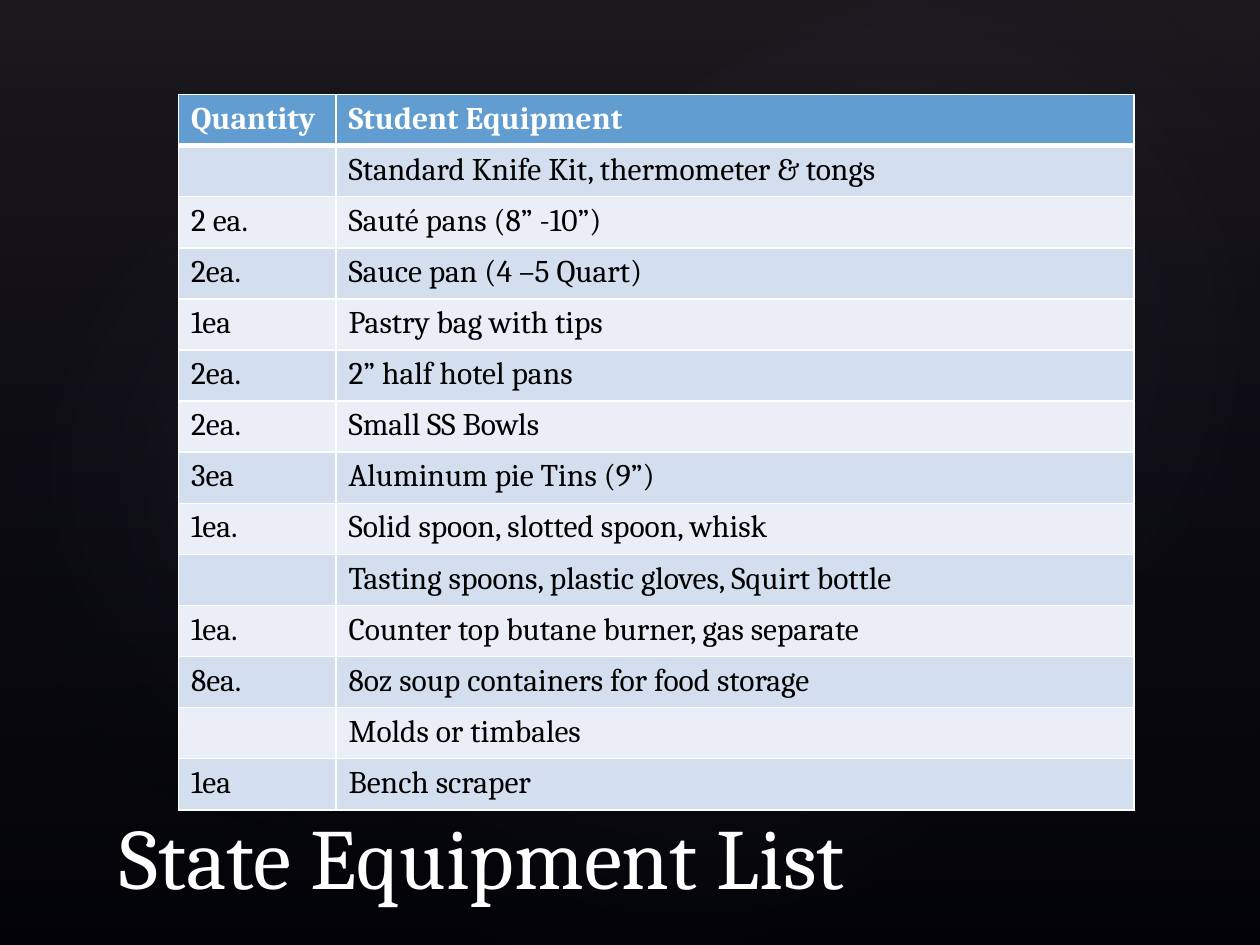
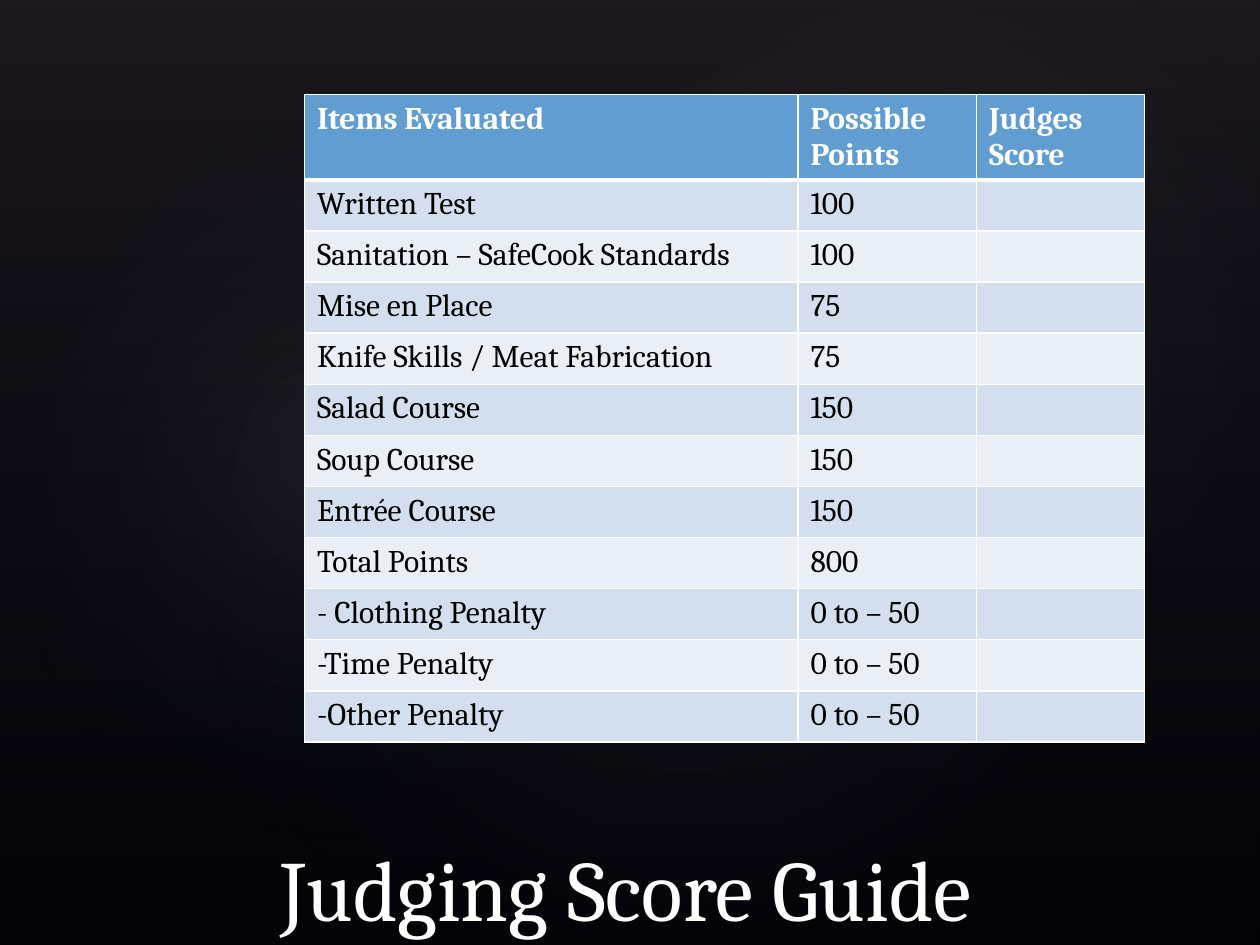
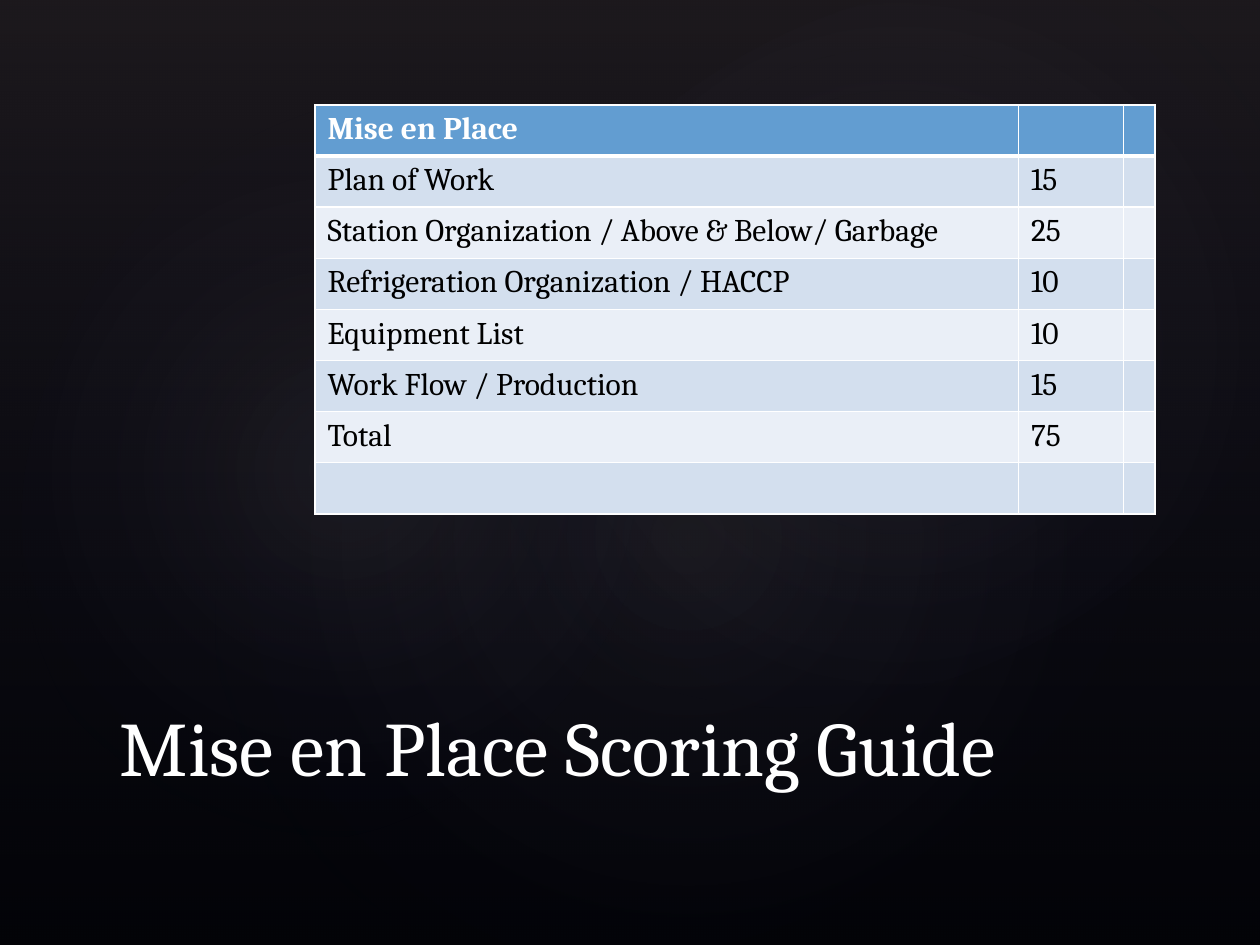
from pptx import Presentation
from pptx import util as u
from pptx.dml.color import RGBColor
from pptx.enum import shapes, text
from pptx.oxml import ns, parse_xml

COLORS = {
    "backdrop": "000000", "veil top": "504652", "veil base": "242852",
    "glow": "C4BCC6", "white": "FFFFFF", "ink": "000000",
    "header": "629DD1", "odd row": "D3DFEE", "even row": "EAEFF7",
}
FONT = "Cambria"
COLUMNS, ROWS = 120, 90
WIDTH, HEIGHT = u.Inches(10), u.Inches(7.5)
ROW_HEIGHT = u.Pt(29.2)
GLOWS = [
    ((18, 13.7, 95, 74.9), 328.7, 7),
    ((-3.6, 15.4, 72.7, 58.8), 294.3, 8),
    ((43, 1.6, 85.1, 62.4), 328.7, 8),
]

EQUIPMENT = [
    ("Quantity", "Student Equipment"),
    ("", "Standard Knife Kit, thermometer & tongs"),
    ("2 ea.", "Sauté pans (8” -10”)"),
    ("2ea.", "Sauce pan (4 –5 Quart)"),
    ("1ea", "Pastry bag with tips"),
    ("2ea.", "2” half hotel pans"),
    ("2ea.", "Small SS Bowls"),
    ("3ea", "Aluminum pie Tins (9”)"),
    ("1ea.", "Solid spoon, slotted spoon, whisk"),
    ("", "Tasting spoons, plastic gloves, Squirt bottle"),
    ("1ea.", "Counter top butane burner, gas separate"),
    ("8ea.", "8oz soup containers for food storage"),
    ("", "Molds or timbales"),
    ("1ea", "Bench scraper"),
]
JUDGING = [
    ("Items Evaluated", "Possible Points", "Judges Score"),
    ("Written Test", "100", ""),
    ("Sanitation – SafeCook Standards", "100", ""),
    ("Mise en Place", "75", ""),
    ("Knife Skills / Meat Fabrication", "75", ""),
    ("Salad Course", "150", ""),
    ("Soup Course", "150", ""),
    ("Entrée Course", "150", ""),
    ("Total Points", "800", ""),
    ("- Clothing Penalty", "0 to – 50", ""),
    ("-Time Penalty", "0 to – 50", ""),
    ("-Other Penalty", "0 to – 50", ""),
]
MISE_EN_PLACE = [
    ("Mise en Place", "", ""),
    ("Plan of Work", "15", ""),
    ("Station Organization / Above & Below/ Garbage", "25", ""),
    ("Refrigeration Organization / HACCP", "10", ""),
    ("Equipment List", "10", ""),
    ("Work Flow / Production", "15", ""),
    ("Total", "75", ""),
    ("", "", ""),
]


def across(columns):
    """Return the width of a number of grid columns."""
    return u.Emu(round(WIDTH * columns / COLUMNS))


def down(rows):
    """Return the height of a number of grid rows."""
    return u.Emu(round(HEIGHT * rows / ROWS))


def place(area):
    """Turn grid left, top, width and height into lengths."""
    left, top, width, height = area
    return across(left), down(top), across(width), down(height)


def rgb(name):
    """Look up a colour of the palette."""
    return RGBColor.from_string(COLORS[name])


def write_text(frame, words, size=18, color="ink", bold=False, align=None):
    """Write one formatted paragraph into a text frame."""
    para = frame.paragraphs[0]
    para.alignment = align
    span = para.add_run()
    span.text = words
    span.font.name = FONT
    span.font.size = u.Pt(size)
    span.font.bold = bold
    span.font.color.rgb = rgb(color)


def gradient_fill(shape, stops, direction):
    """Fill a shape with a gradient of (position, colour, opacity) stops."""
    marks = "".join(
        f'<a:gs pos="{position * 1000}"><a:srgbClr val="{COLORS[color]}">'
        f'<a:alpha val="{opacity * 1000}"/></a:srgbClr></a:gs>'
        for position, color, opacity in stops)
    shape.fill.background()
    properties = shape.element.spPr
    properties.replace(properties.find(ns.qn("a:noFill")), parse_xml(
        f'<a:gradFill {ns.nsdecls("a")} rotWithShape="1">'
        f"<a:gsLst>{marks}</a:gsLst>{direction}</a:gradFill>"))


def add_backdrop_shape(slide, kind, area, stops, direction, rotation=0):
    """Draw one translucent shape of the backdrop."""
    shape = slide.shapes.add_shape(kind, *place(area))
    shape.rotation = rotation
    shape.shadow.inherit = False
    shape.line.fill.background()
    gradient_fill(shape, stops, direction)
    return shape


def dress_layout(layout, slide):
    """Give the layout its dark backdrop with a veil and soft glows."""
    layout.background.fill.solid()
    layout.background.fill.fore_color.rgb = rgb("backdrop")
    tree = layout.shapes.element
    for holder in list(layout.placeholders):
        if holder.placeholder_format.type != shapes.PP_PLACEHOLDER.TITLE:
            tree.remove(holder.element)
    kinds = shapes.MSO_SHAPE
    backdrop = [add_backdrop_shape(
        slide, kinds.RECTANGLE, (0, 0, COLUMNS, ROWS),
        [(0, "veil top", 36), (100, "veil base", 10)], '<a:lin ang="5400000" scaled="0"/>')]
    center = ('<a:path path="circle"><a:fillToRect l="50000" t="50000" '
              'r="50000" b="50000"/></a:path>')
    for area, rotation, opacity in GLOWS:
        backdrop.append(add_backdrop_shape(
            slide, kinds.OVAL, area,
            [(0, "glow", opacity), (58, "veil base", 0)], center, rotation))
    for index, shape in enumerate(backdrop, start=2):
        tree.insert(index, shape.element)


def set_title(slide, words, area, size=49, align=text.PP_ALIGN.LEFT):
    """Move and write the slide's title."""
    title = slide.shapes.title
    title.left, title.top, title.width, title.height = place(area)
    frame = title.text_frame
    frame.word_wrap = True
    frame.auto_size = text.MSO_AUTO_SIZE.NONE
    frame.vertical_anchor = text.MSO_ANCHOR.BOTTOM
    write_text(frame, words, size=size, color="white", align=align)


def set_borders(cell, top=1, bottom=1):
    """Draw white borders around a cell, with widths in points."""
    widths = {"lnL": 1, "lnR": 1, "lnT": top, "lnB": bottom}
    properties = cell._tc.get_or_add_tcPr()
    for index, (side, width) in enumerate(widths.items()):
        properties.insert(index, parse_xml(
            f'<a:{side} {ns.nsdecls("a")} w="{u.Pt(width)}"><a:solidFill>'
            f'<a:srgbClr val="{COLORS["white"]}"/></a:solidFill></a:{side}>'))


def add_banded_table(slide, left, top, widths, records):
    """Add a table with a header row and banded body rows."""
    table = slide.shapes.add_table(
        len(records), len(widths), across(left), down(top),
        across(sum(widths)), ROW_HEIGHT * len(records)).table
    for column, width in zip(table.columns, widths):
        column.width = across(width)
    for number, record in enumerate(records):
        table.rows[number].height = ROW_HEIGHT
        header = number == 0
        band = "header" if header else "odd row" if number % 2 else "even row"
        for cell, words in zip(table.rows[number].cells, record):
            cell.fill.solid()
            cell.fill.fore_color.rgb = rgb(band)
            set_borders(cell, top=3 if number == 1 else 1, bottom=3 if header else 1)
            if words:
                write_text(cell.text_frame, words, bold=header,
                           color="white" if header else "ink")


def main():
    """Build the three slides."""
    deck = Presentation()
    deck.slide_width, deck.slide_height = WIDTH, HEIGHT
    layout = deck.slide_layouts.get_by_name("Title Only")
    equipment, judging, mise = [deck.slides.add_slide(layout) for _ in range(3)]
    dress_layout(layout, equipment)

    add_banded_table(equipment, 17, 9, (15, 76), EQUIPMENT)
    set_title(equipment, "State Equipment List", (10.2, 74, 99, 13))

    add_banded_table(judging, 29, 9, (47, 17, 16), JUDGING)
    set_title(judging, "Judging Score Guide ", (11, 76, 99, 14),
              align=text.PP_ALIGN.CENTER)

    add_banded_table(mise, 30, 10, (67, 10, 3), MISE_EN_PLACE)
    set_title(mise, "Mise en Place Scoring Guide", (10.2, 64, 99, 12), size=44)

    deck.save("out.pptx")


if __name__ == "__main__":
    main()
